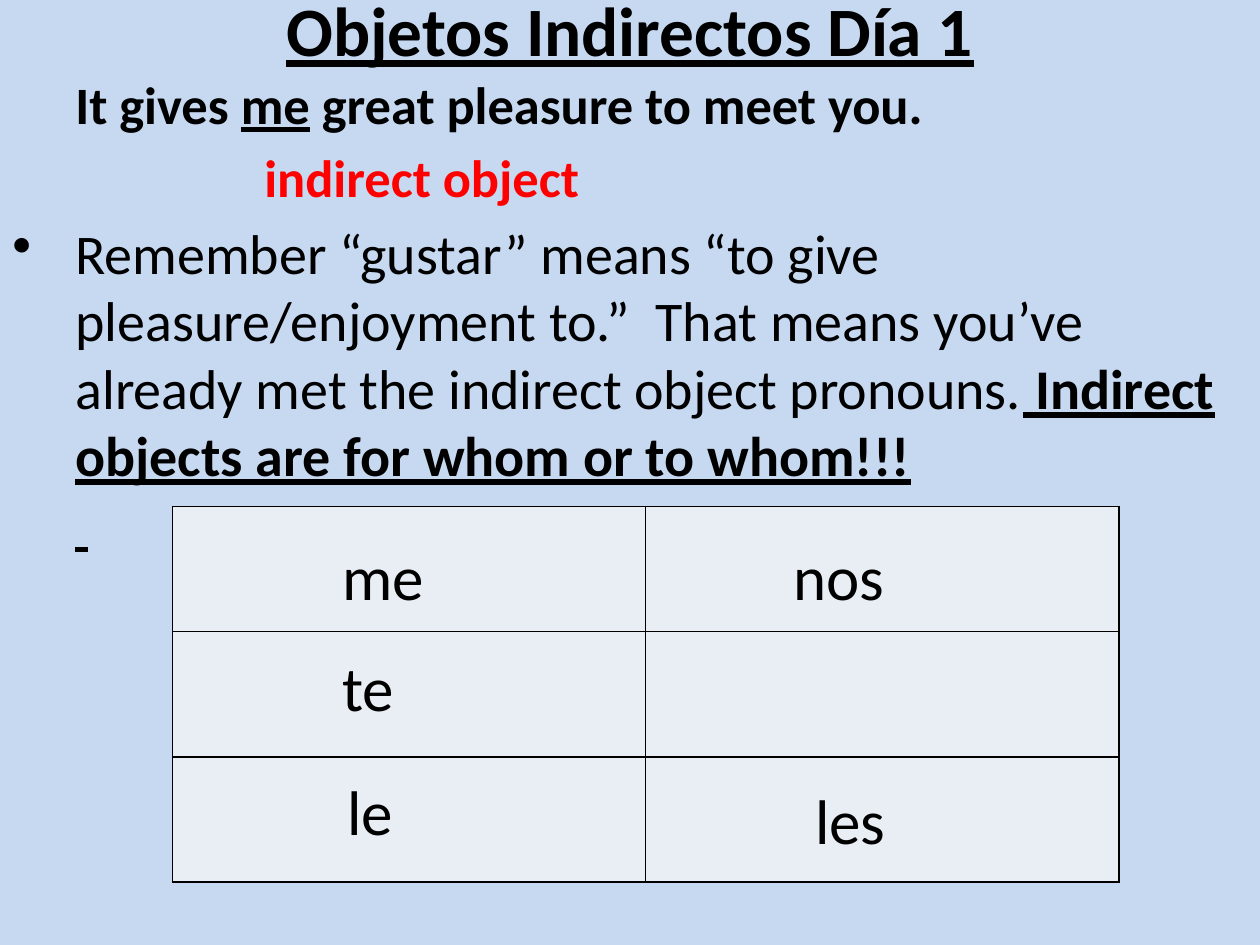
from lxml.etree import SubElement
from pptx import Presentation
from pptx.dml.color import RGBColor
from pptx.enum.text import MSO_ANCHOR, PP_ALIGN
from pptx.oxml.ns import qn
from pptx.util import Inches, Pt

COLORS = {"background": "C6D9F1", "cell": "E9EDF4", "text": "000000", "accent": "FF0000"}
FONT = "Calibri"

TITLE = "Objetos Indirectos Día 1\v"
BODY = [
    {"indent": 0.5, "spans": [
        ("It gives ", {"size": 30, "bold": True}),
        ("me", {"size": 30, "bold": True, "underline": True}),
        (" great pleasure to meet you.", {"size": 30, "bold": True})]},
    {"indent": 2, "spans": [
        ("indirect object", {"size": 30, "bold": True, "color": "accent"})]},
    {"indent": 0.5, "bullet": "•", "spans": [
        ("Remember “gustar” means “to give pleasure/enjoyment to.”  That means "
         "you’ve already met the indirect object pronouns.", {"size": 32}),
        (" Indirect objects are for whom or to whom!!!\v ",
         {"size": 32, "bold": True, "underline": True})]},
]
PRONOUNS = [
    ("me", 2.62, 4.22),
    ("te", 2.62, 5.1),
    ("le", 2.66, 6.08),
    ("nos", 6.2, 4.22),
    ("les", 6.37, 6.15),
]
TABLE = {"rows": 3, "columns": 2, "place": (1.37, 4.02, 7.51, 2.98)}


def add_box(page, left, top, width, height):
    box = page.shapes.add_textbox(*map(Inches, (left, top, width, height)))
    box.text_frame.word_wrap = True
    return box.text_frame


def add_text(para, text, size, color="text", **style):
    for index, piece in enumerate(text.split("\v")):
        if index:
            para.add_line_break()
        if not piece:
            continue
        span = para.add_run()
        span.text = piece
        values = {"name": FONT, "size": Pt(size), **style}
        for name, value in values.items():
            setattr(span.font, name, value)
        span.font.color.rgb = RGBColor.from_string(COLORS[color])
    para.font.size = Pt(size)
    for line_break in para._p.findall(qn("a:br")):
        SubElement(line_break, qn("a:rPr"), sz=str(round(size * 100)))


def set_indent(para, indent, bullet=None):
    properties = para._p.get_or_add_pPr()
    properties.set("marL", str(Inches(indent)))
    if bullet:
        properties.set("indent", str(-Inches(indent)))
        mark = SubElement(properties, qn("a:buChar"), char=bullet)
        settings = properties.find(qn("a:defRPr"))
        if settings is not None:
            settings.addprevious(mark)


def set_borders(cell):
    properties = cell._tc.get_or_add_tcPr()
    for position, side in enumerate(("lnL", "lnR", "lnT", "lnB")):
        line = SubElement(properties, qn(f"a:{side}"), w=str(Pt(1)))
        fill = SubElement(line, qn("a:solidFill"))
        SubElement(fill, qn("a:srgbClr"), val=COLORS["text"])
        properties.insert(position, line)


def add_title(page):
    frame = add_box(page, 0, 0.1, 10, 0.92)
    frame.vertical_anchor = MSO_ANCHOR.MIDDLE
    para = frame.paragraphs[0]
    para.alignment = PP_ALIGN.CENTER
    add_text(para, TITLE, 39.6, bold=True, underline=True)
    SubElement(para._p, qn("a:endParaRPr"), sz="3960")


def add_body(page):
    frame = add_box(page, 0, 0.52, 10, 7.32)
    for index, item in enumerate(BODY):
        para = frame.add_paragraph() if index else frame.paragraphs[0]
        para.space_before = Pt(6)
        for text, style in item["spans"]:
            add_text(para, text, **style)
        set_indent(para, item["indent"], item.get("bullet"))


def add_pronoun_table(page):
    table = page.shapes.add_table(
        TABLE["rows"], TABLE["columns"], *map(Inches, TABLE["place"])).table
    table.first_row = False
    table.horz_banding = False
    for cell in table.iter_cells():
        cell.fill.solid()
        cell.fill.fore_color.rgb = RGBColor.from_string(COLORS["cell"])
        set_borders(cell)
    for text, left, top in PRONOUNS:
        frame = add_box(page, left, top, 1.22, 0.71)
        add_text(frame.paragraphs[0], text, 36)


def main():
    deck = Presentation()
    deck.slide_width, deck.slide_height = Inches(10), Inches(7.5)
    page = deck.slides.add_slide(deck.slide_layouts[6])
    page.background.fill.solid()
    page.background.fill.fore_color.rgb = RGBColor.from_string(COLORS["background"])
    add_title(page)
    add_body(page)
    add_pronoun_table(page)
    deck.save("out.pptx")


if __name__ == "__main__":
    main()
